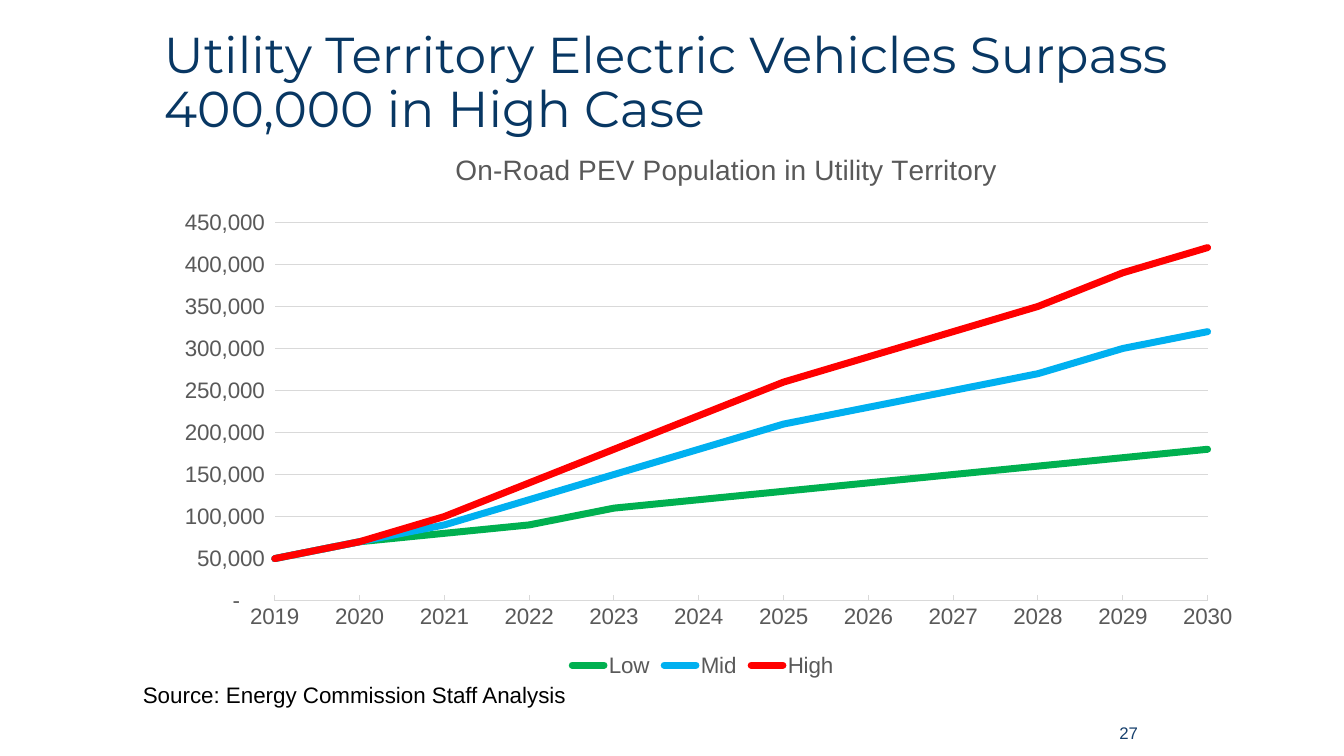
from pptx import Presentation
from pptx.chart.data import CategoryChartData
from pptx.dml.color import RGBColor
from pptx.enum.chart import XL_CHART_TYPE as ChartType
from pptx.enum.chart import XL_LEGEND_POSITION as LegendPosition
from pptx.enum.chart import XL_TICK_MARK as TickMark
from pptx.enum.text import MSO_ANCHOR as Anchor
from pptx.enum.text import PP_ALIGN as Align
from pptx.oxml import parse_xml
from pptx.oxml.ns import nsdecls, qn
from pptx.util import Pt

NAVY, BLUE, BLACK = "083763", "17406D", "000000"
GREY, GRID = "595959", "D9D9D9"
YEARS = [str(year) for year in range(2019, 2031)]
# Name, colour and population in thousands
CASES = [
    ("Low", "00B050", [50, 70, 80, 90, 110, 120, 130, 140, 150, 160, 170, 180]),
    ("Mid", "00B0F0", [50, 70, 90, 120, 150, 180, 210, 230, 250, 270, 300, 320]),
    ("High", "FF0000", [50, 70, 100, 140, 180, 220, 260, 290, 320, 350, 390, 420]),
]


def color(value):
    return RGBColor.from_string(value)


def style_font(font, size, fill, name="Arial"):
    font.name = name
    font.size = Pt(size)
    font.bold = False
    font.color.rgb = color(fill)


def style_line(line, fill, width):
    line.color.rgb = color(fill)
    line.width = Pt(width)


def add_text(page, frame, text, size, fill, name="Arial", align=Align.LEFT,
             anchor=Anchor.MIDDLE, spacing=1.0):
    box = page.shapes.add_textbox(*map(Pt, frame))
    box.text_frame.word_wrap = True
    box.text_frame.vertical_anchor = anchor
    para = box.text_frame.paragraphs[0]
    para.text = text
    para.alignment = align
    para.line_spacing = spacing
    style_font(para.runs[0].font, size, fill, name)


def set_layout(parent, index, target="", **values):
    """Place a chart part by fractions of the chart area."""
    for old in parent.findall(qn("c:layout")):
        parent.remove(old)
    modes = '<c:xMode val="edge"/><c:yMode val="edge"/>'
    places = "".join(f'<c:{key} val="{value}"/>' for key, value in values.items())
    parent.insert(index, parse_xml(
        f'<c:layout {nsdecls("c")}><c:manualLayout>{target}{modes}{places}'
        "</c:manualLayout></c:layout>"))


def start_lines_on_axis(value_axis):
    element = value_axis._element
    for old in element.findall(qn("c:crossBetween")):
        element.remove(old)
    element.find(qn("c:crosses")).addnext(
        parse_xml(f'<c:crossBetween {nsdecls("c")} val="midCat"/>'))


def style_axes(chart):
    years = chart.category_axis
    years.major_tick_mark = TickMark.INSIDE
    years.has_major_gridlines = False
    style_line(years.format.line, GRID, 0.75)

    vehicles = chart.value_axis
    start_lines_on_axis(vehicles)
    vehicles.minimum_scale, vehicles.maximum_scale = 0, 450000
    vehicles.major_unit = 50000
    vehicles.major_tick_mark = TickMark.NONE
    vehicles.format.line.fill.background()
    style_line(vehicles.major_gridlines.format.line, GRID, 0.75)
    labels = vehicles.tick_labels
    labels.number_format = '_(* #,##0_);_(* \\(#,##0\\);_(* "-"??_);_(@_)'
    labels.number_format_is_linked = False

    for axis in (years, vehicles):
        axis.minor_tick_mark = TickMark.NONE
        style_font(axis.tick_labels.font, 16, GREY)


def add_line_chart(page, frame, title):
    data = CategoryChartData()
    data.categories = YEARS
    for name, _, thousands in CASES:
        data.add_series(name, [value * 1000 for value in thousands])
    chart = page.shapes.add_chart(ChartType.LINE, *map(Pt, frame), data).chart
    style_font(chart.font, 10, BLACK)

    # Title and plot area
    heading = chart.chart_title
    heading.text_frame.text = title
    style_font(heading.text_frame.paragraphs[0].runs[0].font, 20, GREY)
    set_layout(heading._element, 1, x=0.27, y=0.01)
    plot_area = chart._chartSpace.chart.plotArea
    set_layout(plot_area, 0, '<c:layoutTarget val="inner"/>',
               x=0.11, y=0.15, w=0.85, h=0.7)
    style_axes(chart)

    # Legend
    chart.has_legend = True
    chart.legend.position = LegendPosition.BOTTOM
    chart.legend.include_in_layout = False
    style_font(chart.legend.font, 16, GREY)

    # Lines
    for series, (_, fill, _) in zip(chart.plots[0].series, CASES):
        series.smooth = False
        style_line(series.format.line, fill, 5)
        series._element.spPr.find(qn("a:ln")).set("cap", "rnd")


def main():
    deck = Presentation()
    deck.slide_width, deck.slide_height = Pt(960), Pt(540)
    page = deck.slides.add_slide(deck.slide_layouts[6])

    add_text(page, (110, 19, 784, 82),
             "Utility Territory Electric Vehicles Surpass 400,000 in High Case",
             36, NAVY, "Montserrat", spacing=0.9)
    add_line_chart(page, (110, 101, 784, 386),
                   "On-Road PEV Population in Utility Territory")
    add_text(page, (95, 483, 318, 27), "Source: Energy Commission Staff Analysis",
             16, BLACK, anchor=Anchor.TOP)
    add_text(page, (678, 509, 142, 29), "27", 12, BLUE, align=Align.RIGHT)

    deck.save("out.pptx")


if __name__ == "__main__":
    main()
